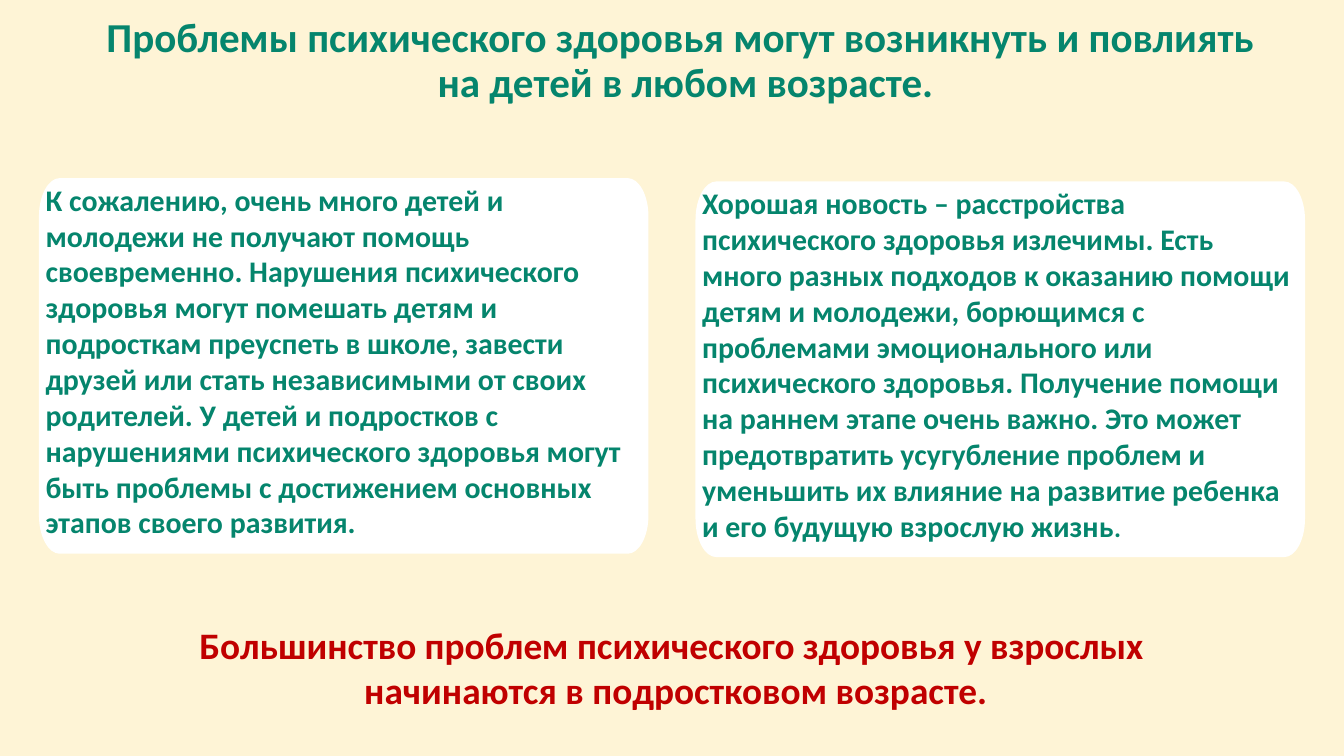
"""Builds a slide on mental health in childhood: a title, two text cards and a conclusion."""
from dataclasses import dataclass

from lxml.etree import SubElement
from pptx import Presentation
from pptx.dml.color import RGBColor
from pptx.enum.text import MSO_ANCHOR, MSO_AUTO_SIZE, PP_ALIGN
from pptx.oxml.ns import qn
from pptx.util import Inches, Pt


@dataclass(frozen=True)
class Theme:
    font: str = "Calibri"
    background: RGBColor = RGBColor(0xFE, 0xF4, 0xD6)
    card: RGBColor = RGBColor(0xFF, 0xFF, 0xFF)
    green: RGBColor = RGBColor(0x05, 0x85, 0x6D)
    red: RGBColor = RGBColor(0xC0, 0x00, 0x00)
    title_size: int = 44
    conclusion_size: int = 40
    card_size: int = 32
    full_stop_size: int = 28


THEME = Theme()

TITLE = [
    [("Проблемы психического здоровья могут возникнуть и повлиять ", THEME.title_size)],
    [("на детей в любом возрасте.", THEME.title_size)],
]
CONCLUSION = [
    [("Большинство проблем психического здоровья у взрослых ", THEME.conclusion_size)],
    [("начинаются в подростковом возрасте.", THEME.conclusion_size)],
]
CARDS = [
    ((0.58, 2.65), [[(
        "К сожалению, очень много детей и молодежи не получают помощь своевременно. "
        "Нарушения психического здоровья могут помешать детям и подросткам преуспеть в школе, "
        "завести друзей или стать независимыми от своих родителей. У детей и подростков с "
        "нарушениями психического здоровья могут быть проблемы с достижением основных этапов "
        "своего развития.", THEME.card_size)]]),
    ((10.35, 2.7), [[(
        "Хорошая новость – расстройства психического здоровья излечимы. Есть много разных "
        "подходов к оказанию помощи детям и молодежи, борющимся с проблемами эмоционального "
        "или психического здоровья. Получение помощи на раннем этапе очень важно. Это может "
        "предотвратить усугубление проблем и уменьшить их влияние на развитие ребенка и его "
        "будущую взрослую жизнь", THEME.card_size), (".", THEME.full_stop_size)]]),
]
CARD_SIZE = (9.07, 5.59)
CORNER = (0.31, 0.57)
CURVE_RATIO = 0.55
TITLE_BOX = (0.75, 0.21, 18.91, 1.5)
CONCLUSION_BOX = (0.6, 9.21, 18.91, 1.83)


def write_text(shape, paragraphs, color, alignment, line_spacing=1.0):
    frame = shape.text_frame
    frame.word_wrap = True
    frame.auto_size = MSO_AUTO_SIZE.NONE
    frame.vertical_anchor = MSO_ANCHOR.TOP
    frame.margin_left = frame.margin_right = Inches(0.1)
    frame.margin_top = frame.margin_bottom = Inches(0.05)
    for index, runs in enumerate(paragraphs):
        paragraph = frame.add_paragraph() if index else frame.paragraphs[0]
        paragraph.alignment = alignment
        paragraph.line_spacing = line_spacing
        for text, size in runs:
            run = paragraph.add_run()
            run.text = text
            run.font.name = THEME.font
            run.font.size = Pt(size)
            run.font.bold = True
            run.font.color.rgb = color


def card_outline(left, top):
    right, bottom = left + CARD_SIZE[0], top + CARD_SIZE[1]
    near_x, far_x = left + CORNER[0], right - CORNER[0]
    near_y, far_y = top + CORNER[1], bottom - CORNER[1]
    points = [(far_x, bottom), (near_x, bottom), (left, far_y), (left, near_y),
              (near_x, top), (far_x, top), (right, near_y), (right, far_y), (far_x, bottom)]
    return [(Inches(x), Inches(y)) for x, y in points]


def round_corners(card):
    segments = list(card._element.iter(qn("a:moveTo"), qn("a:lnTo")))
    points = [(int(segment[0].get("x")), int(segment[0].get("y"))) for segment in segments]
    for index in range(2, len(segments), 2):
        start, end = points[index - 1], points[index]
        corner = (end[0], start[1]) if index % 4 == 2 else (start[0], end[1])
        if segments[index - 1].tag == qn("a:lnTo") and points[index - 2][0] == start[0]:
            corner = (start[0], end[1])
        else:
            corner = (end[0], start[1])
        curve = segments[index].makeelement(qn("a:cubicBezTo"))
        controls = [tuple(round(a + CURVE_RATIO * (b - a)) for a, b in zip(point, corner))
                    for point in (start, end)]
        for x, y in (*controls, end):
            SubElement(curve, qn("a:pt"), x=str(x), y=str(y))
        segments[index].getparent().replace(segments[index], curve)


def add_card(slide, position, paragraphs):
    start, *rest = card_outline(*position)
    builder = slide.shapes.build_freeform(*start)
    builder.add_line_segments(rest, close=True)
    card = builder.convert_to_shape()
    round_corners(card)
    card.shadow.inherit = False
    card.fill.solid()
    card.fill.fore_color.rgb = THEME.card
    card.line.fill.background()
    write_text(card, paragraphs, THEME.green, PP_ALIGN.LEFT)


def main():
    presentation = Presentation()
    presentation.slide_width, presentation.slide_height = Inches(20), Inches(11.25)
    slide = presentation.slides.add_slide(presentation.slide_layouts[5])
    slide.background.fill.solid()
    slide.background.fill.fore_color.rgb = THEME.background

    title = slide.shapes.title
    title.left, title.top, title.width, title.height = map(Inches, TITLE_BOX)
    write_text(title, TITLE, THEME.green, PP_ALIGN.CENTER, 0.9)

    for position, paragraphs in CARDS:
        add_card(slide, position, paragraphs)

    conclusion = slide.shapes.add_textbox(*map(Inches, CONCLUSION_BOX))
    write_text(conclusion, CONCLUSION, THEME.red, PP_ALIGN.CENTER)

    presentation.save("out.pptx")


if __name__ == "__main__":
    main()
